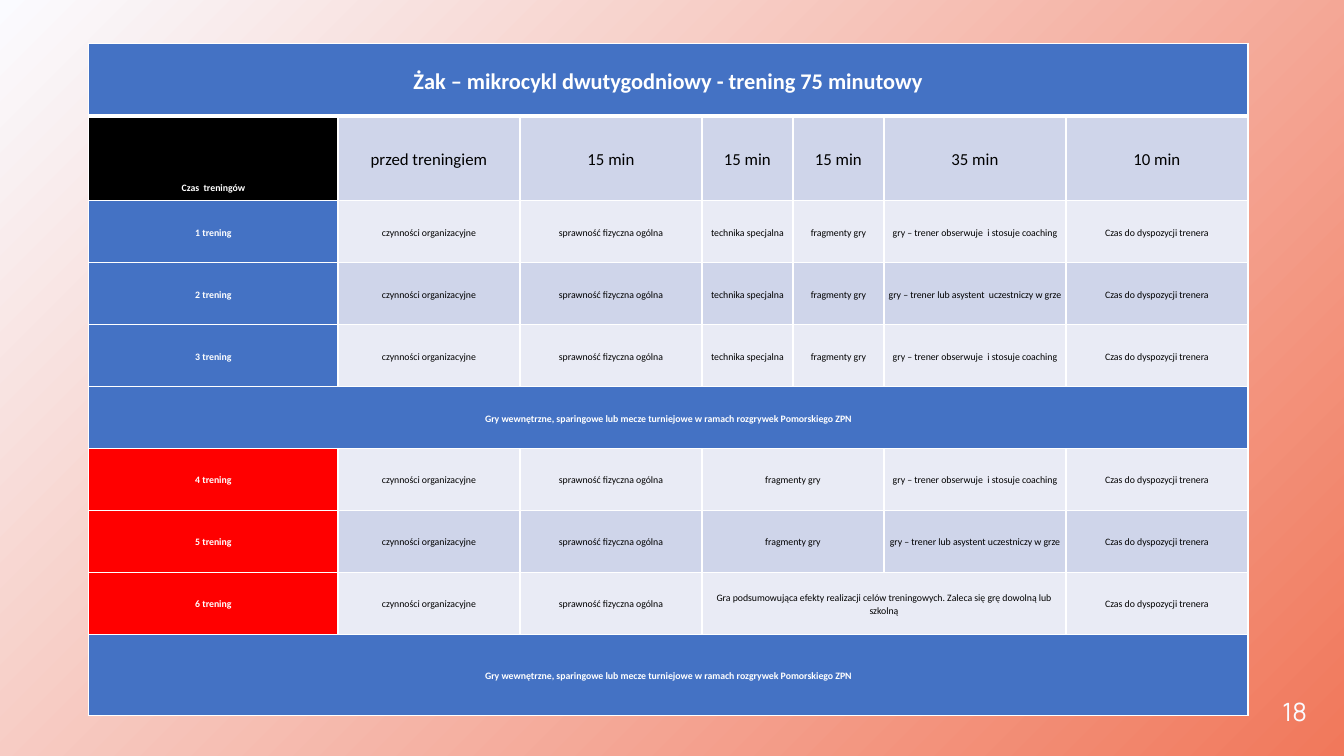
from dataclasses import dataclass

from lxml import etree
from pptx import Presentation
from pptx import util as u
from pptx.dml.color import RGBColor
from pptx.enum import text
from pptx.oxml import ns


@dataclass(frozen=True)
class Theme:
    blue: str = "4472C4"
    red: str = "FF0000"
    black: str = "000000"
    white: str = "FFFFFF"
    band_dark: str = "CFD5EA"
    band_light: str = "E9EBF5"
    pale: str = "FAFBFF"
    coral: str = "F1785B"
    table_font: str = "Calibri"
    number_font: str = "Manrope"
    title_size: float = 16
    head_size: float = 12
    body_size: float = 7
    number_size: float = 18


class SlideBuilder:
    def __init__(self, prs, theme):
        self.theme = theme
        self.slide = prs.slides.add_slide(prs.slide_layouts[6])

    def background(self):
        fill = self.slide.background.fill
        fill.gradient()
        fill.gradient_angle = 315
        for stop, color in zip(fill.gradient_stops, (self.theme.pale, self.theme.coral)):
            stop.color.rgb = RGBColor.from_string(color)

    def format_run(self, r, font, size, color, bold=False):
        r.font.name = font
        r.font.size = u.Pt(size)
        r.font.bold = bold
        r.font.color.rgb = RGBColor.from_string(color)

    def page_number(self, number, left, top, width, height):
        sp = self.slide.shapes.add_textbox(*map(u.Pt, (left, top, width, height)))
        tf = sp.text_frame
        tf.margin_left = tf.margin_top = tf.margin_right = tf.margin_bottom = 0
        tf.word_wrap = True
        tf.text = number
        p = tf.paragraphs[0]
        p.alignment = text.PP_ALIGN.RIGHT
        self.format_run(p.runs[0], self.theme.number_font, self.theme.number_size, self.theme.pale)

    def table(self, left, top, widths, heights):
        frame = self.slide.shapes.add_table(
            len(heights), len(widths), u.Pt(left), u.Pt(top),
            u.Pt(sum(widths)), u.Pt(sum(heights)))
        table = frame.table
        table.first_row = table.horz_banding = False
        for column, width in zip(table.columns, widths):
            column.width = u.Pt(width)
        for row, height in zip(table.rows, heights):
            row.height = u.Pt(height)
        return table

    def borders(self, cell, top=1, bottom=1):
        tcPr = cell._tc.get_or_add_tcPr()
        for i, (side, width) in enumerate((("L", 1), ("R", 1), ("T", top), ("B", bottom))):
            ln = etree.Element(ns.qn("a:ln" + side), w=str(u.Pt(width)))
            solid = etree.SubElement(ln, ns.qn("a:solidFill"))
            etree.SubElement(solid, ns.qn("a:srgbClr"), val=self.theme.white)
            tcPr.insert(i, ln)

    def cell(self, cell, words, fill, size, color, bold):
        cell.fill.solid()
        cell.fill.fore_color.rgb = RGBColor.from_string(fill)
        cell.vertical_anchor = text.MSO_ANCHOR.MIDDLE
        cell.margin_left = cell.margin_right = u.Pt(3)
        cell.margin_top = cell.margin_bottom = 0
        cell.text_frame.text = words
        p = cell.text_frame.paragraphs[0]
        p.alignment = text.PP_ALIGN.CENTER
        p.line_spacing = 1.15
        p.space_after = u.Pt(10)
        for r in p.runs:
            self.format_run(r, self.theme.table_font, size, color, bold)


# Each row: label followed by (text, columns spanned)
START = [("czynności organizacyjne", 1), ("sprawność fizyczna ogólna", 1)]
SKILLS = [("technika specjalna", 1), ("fragmenty gry", 1)]
FRAGMENTS = [("fragmenty gry", 2)]
COACHING = [("gry – trener obserwuje  i stosuje coaching", 1)]
FINISH = [("Czas do dyspozycji trenera", 1)]
MATCHES = [("Gry wewnętrzne, sparingowe lub mecze turniejowe w ramach rozgrywek Pomorskiego ZPN", 7)]
SUMMARY = [("Gra podsumowująca efekty realizacji celów treningowych. "
            "Zaleca się grę dowolną lub szkolną", 3)]
TIMES = ["przed treningiem", "15 min", "15 min", "15 min", "35 min", "10 min"]


def training(number, middle):
    return [(f"{number} trening", 1)] + START + middle + FINISH


ROWS = [
    [("Żak – mikrocykl dwutygodniowy - trening 75 minutowy", 7)],
    [("Czas  treningów", 1)] + [(time, 1) for time in TIMES],
    training(1, SKILLS + COACHING),
    training(2, SKILLS + [("gry – trener lub asystent  uczestniczy w grze", 1)]),
    training(3, SKILLS + COACHING),
    MATCHES,
    training(4, FRAGMENTS + COACHING),
    training(5, FRAGMENTS + [("gry – trener lub asystent uczestniczy w grze", 1)]),
    training(6, SUMMARY),
    MATCHES,
]
WIDTHS = [178, 130, 130, 65, 65, 130, 130]
HEIGHTS = [51.8, 60.7] + [44.3] * 7 + [57.8]
TITLE_ROW, TIME_ROW, SECOND_WEEK = 0, 1, 6


def fill_schedule(builder, table):
    theme = builder.theme
    for i, row in enumerate(ROWS):
        band = theme.band_dark if i % 2 else theme.band_light
        size = {TITLE_ROW: theme.title_size, TIME_ROW: theme.head_size}.get(i, theme.body_size)
        column = 0
        for words, span in row:
            cell = table.cell(i, column)
            if span > 1:
                cell.merge(table.cell(i, column + span - 1))
            if column:
                builder.cell(cell, words, band, size, theme.black, False)
            elif i == TIME_ROW:
                builder.cell(cell, words, theme.black, theme.body_size, theme.white, True)
                cell.vertical_anchor = text.MSO_ANCHOR.BOTTOM
                cell.margin_bottom = u.Pt(5)
            else:
                week = theme.red if i >= SECOND_WEEK and span == 1 else theme.blue
                builder.cell(cell, words, week, size, theme.white, True)
            column += span
        for column in range(len(WIDTHS)):
            builder.borders(table.cell(i, column), top=3 if i == TIME_ROW else 1,
                            bottom=3 if i == TITLE_ROW else 1)


def main():
    prs = Presentation()
    prs.slide_width, prs.slide_height = u.Pt(960), u.Pt(540)
    builder = SlideBuilder(prs, Theme())
    builder.background()
    # Slide number
    builder.page_number("18", 891, 497.5, 42.5, 21.6)
    # Two-week training schedule
    fill_schedule(builder, builder.table(63.4, 31, WIDTHS, HEIGHTS))
    prs.save("out.pptx")


if __name__ == "__main__":
    main()
